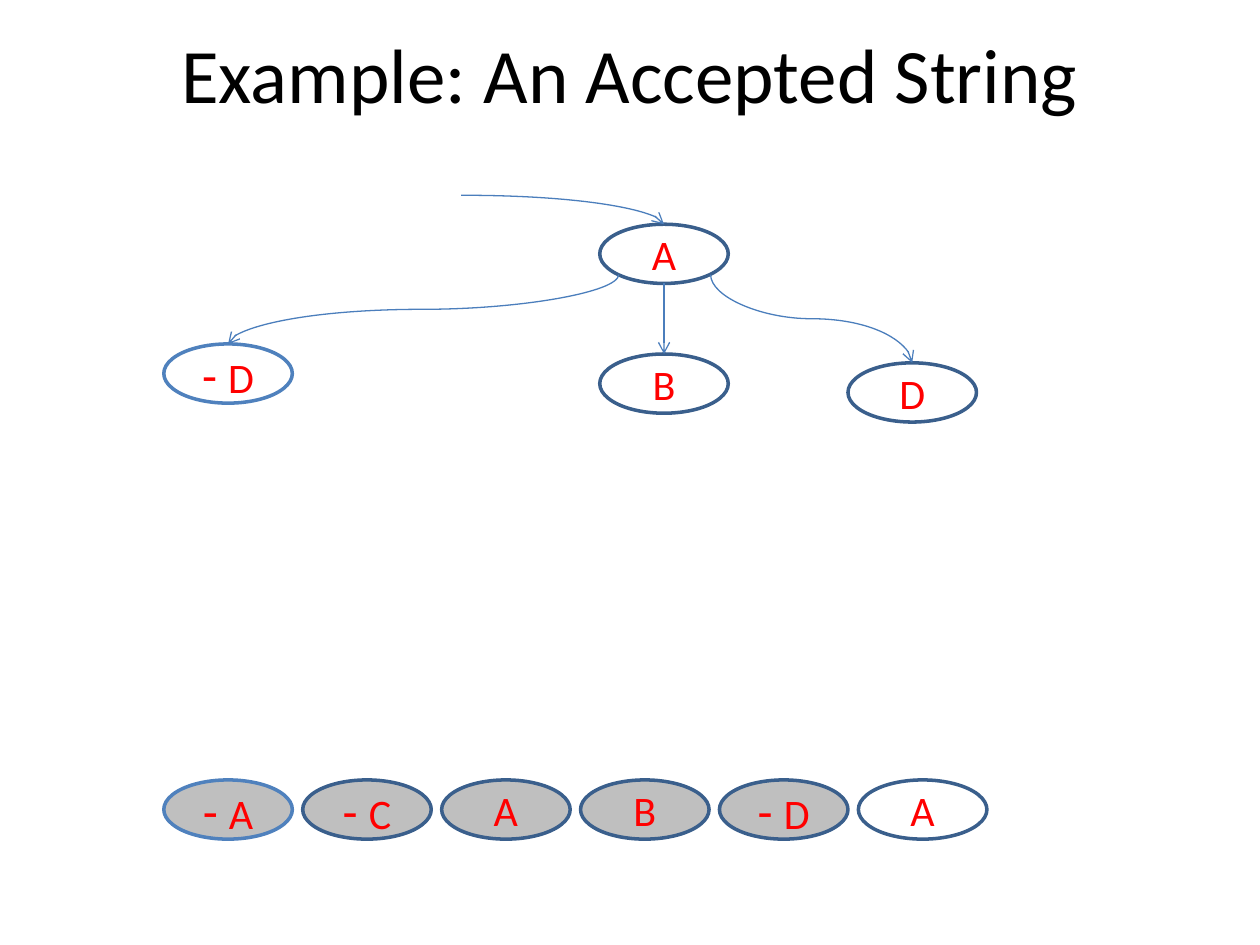
from lxml.etree import SubElement
from pptx import Presentation
from pptx.dml.color import RGBColor
from pptx.enum.shapes import MSO_CONNECTOR as Connector, MSO_SHAPE as Shape
from pptx.enum.text import MSO_ANCHOR as Anchor, PP_ALIGN as Align
from pptx.oxml.ns import qn
from pptx.util import Inches, Pt

COLORS = {
    "title": "000000",
    "label": "FF0000",
    "open": "FFFFFF",
    "read": "BFBFBF",
    "outline": "3A5F8C",
    "first": "4F81BD",
    "arrow": "4B7EBC",
}
NODE_WIDTH, NODE_HEIGHT = 1.02, 0.47
LEFT = 1.3
STRING_TOP, STRING_STEP = 6.19, 1.1025
STRING = ["- A", "- C", "A", "B", "- D", "A"]


def color(name):
    return RGBColor.from_string(COLORS[name])


def add_run(paragraph, text, size, color_name):
    run = paragraph.add_run()
    run.text = text
    run.font.name = "Calibri"
    run.font.size = Pt(size)
    run.font.color.rgb = color(color_name)


def add_title(slide, text):
    title = slide.shapes.title
    title.left, title.top = Inches(0.5), Inches(0)
    title.width, title.height = Inches(9), Inches(1.15)
    title.text_frame.vertical_anchor = Anchor.MIDDLE
    paragraph = title.text_frame.paragraphs[0]
    paragraph.alignment = Align.CENTER
    add_run(paragraph, text, 44, "title")


def add_node(slide, label, left, top, fill="open", outline="outline"):
    node = slide.shapes.add_shape(
        Shape.OVAL, Inches(left), Inches(top), Inches(NODE_WIDTH), Inches(NODE_HEIGHT)
    )
    node.shadow.inherit = False
    node.fill.solid()
    node.fill.fore_color.rgb = color(fill)
    node.line.color.rgb = color(outline)
    node.line.width = Pt(2)
    node.text_frame.vertical_anchor = Anchor.MIDDLE
    paragraph = node.text_frame.paragraphs[0]
    paragraph.alignment = Align.CENTER
    if label.startswith("- "):
        add_run(paragraph, "- ", 28, "label")
    add_run(paragraph, label.removeprefix("- "), 24, "label")


def add_curve(slide, begin, end):
    points = [Inches(value) for value in (*begin, *end)]
    curve = slide.shapes.add_connector(Connector.CURVE, *points)
    curve.line.color.rgb = color("arrow")
    curve.line.width = Pt(0.75)
    SubElement(curve.line._get_or_add_ln(), qn("a:tailEnd"), type="arrow")
    SubElement(curve._element.spPr, qn("a:effectLst"))
    return curve


def add_entry_curve(slide, begin, end):
    curve = add_curve(slide, begin, end)
    curve._element.spPr.find(qn("a:prstGeom")).set("prst", "curvedConnector2")


def add_branch_curve(slide, begin, end):
    center_x, center_y = (begin[0] + end[0]) / 2, (begin[1] + end[1]) / 2
    half_drop, half_span = (end[1] - begin[1]) / 2, abs(end[0] - begin[0]) / 2
    goes_right = end[0] > begin[0]
    side = half_drop if goes_right else -half_drop
    curve = add_curve(
        slide,
        (center_x + side, center_y - half_span),
        (center_x - side, center_y + half_span),
    )
    curve.rotation = 270 if goes_right else 90


def main():
    presentation = Presentation()
    presentation.slide_width, presentation.slide_height = Inches(10), Inches(7.5)
    slide = presentation.slides.add_slide(presentation.slide_layouts[5])
    add_title(slide, "Example: An Accepted String")

    for index, label in enumerate(STRING):
        add_node(
            slide,
            label,
            LEFT + index * STRING_STEP,
            STRING_TOP,
            "open" if index == len(STRING) - 1 else "read",
            "first" if index == 0 else "outline",
        )

    root_left, root_top = 4.76, 1.78
    root_center = root_left + NODE_WIDTH / 2
    add_node(slide, "A", root_left, root_top)
    add_entry_curve(slide, (3.66, 1.55), (root_center, root_top))

    branches = [
        ("- D", LEFT, 2.73, "first", (4.91, 2.18)),
        ("B", root_left, 2.81, "outline", (root_center, root_top + NODE_HEIGHT)),
        ("D", 6.73, 2.88, "outline", (5.64, 2.18)),
    ]
    for label, left, top, outline, begin in branches:
        add_node(slide, label, left, top, outline=outline)
        add_branch_curve(slide, begin, (left + NODE_WIDTH / 2, top))

    presentation.save("out.pptx")


if __name__ == "__main__":
    main()
